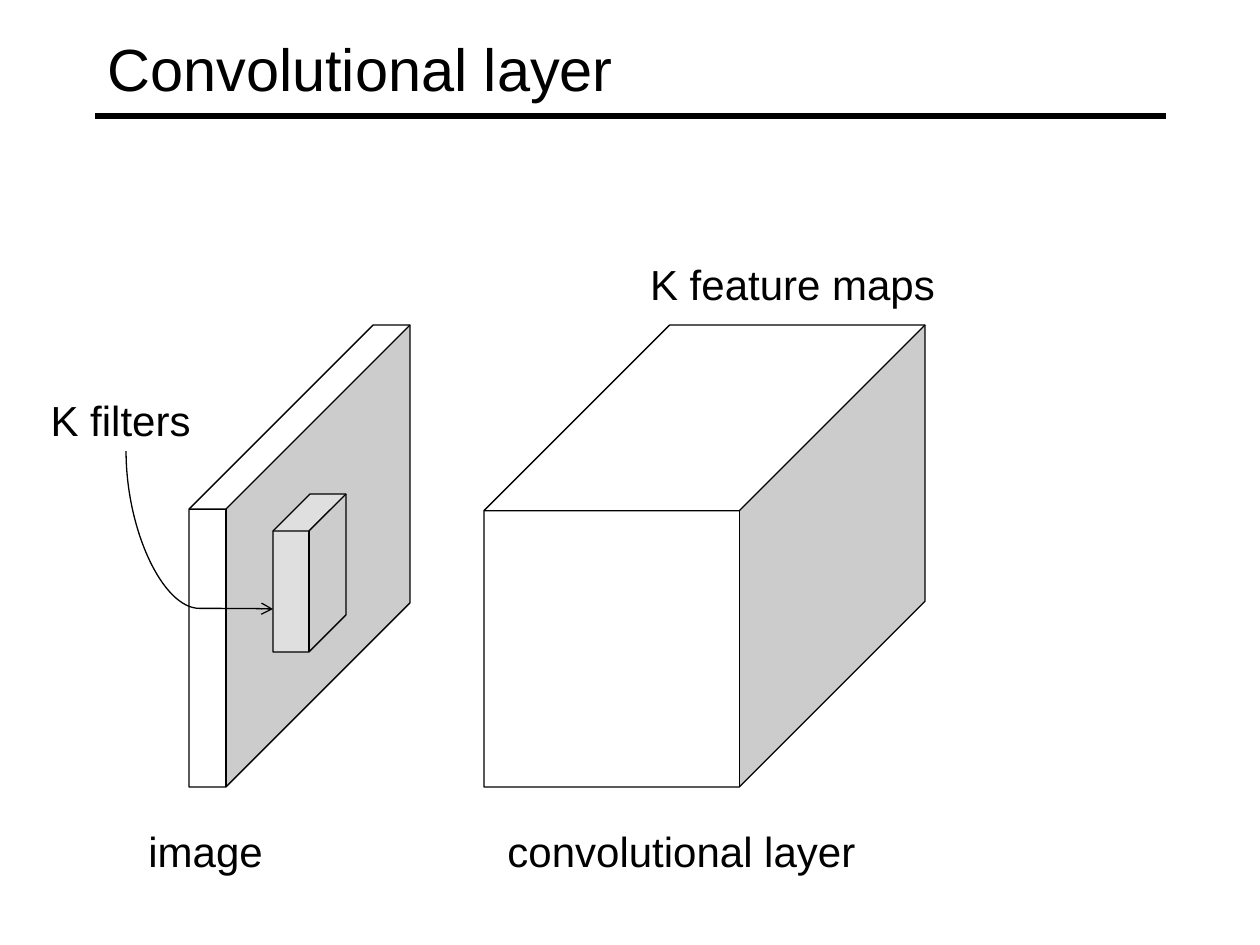
from lxml.etree import SubElement
from pptx import Presentation
from pptx.dml.color import RGBColor
from pptx.enum.shapes import MSO_CONNECTOR, MSO_SHAPE
from pptx.enum.text import MSO_ANCHOR, PP_ALIGN
from pptx.oxml.ns import qn
from pptx.util import Pt

SCALE = 914400 / 126  # EMU in one px
BLACK = RGBColor(0, 0, 0)
WHITE = RGBColor(255, 255, 255)
FONT = {"name": "Arial", "size": Pt(24)}
HEAD = {"name": "Arial", "size": Pt(34)}


def emu(*sizes):
    return [round(size * SCALE) for size in sizes]


def style(font, form):
    for key, value in form.items():
        setattr(font, key, value)
    font.color.rgb = BLACK


def stroke(line, width):
    line.color.rgb = BLACK
    line.width = Pt(width)


def link(slide, kind, ends, width):
    """Draw a connector without a shadow."""
    wire = slide.shapes.add_connector(kind, *emu(*ends))
    stroke(wire.line, width)
    SubElement(wire._element.spPr, qn("a:effectLst"))
    return wire


def header(slide, box, text):
    """Fill the title and rule it off below."""
    title = slide.shapes.title
    title.left, title.top, title.width, title.height = emu(*box)
    frame = title.text_frame
    frame.text = text
    frame.vertical_anchor = MSO_ANCHOR.MIDDLE
    para = frame.paragraphs[0]
    para.alignment = PP_ALIGN.LEFT
    style(para.font, HEAD)
    left, top, width, height = box
    base = top + height - 10
    link(slide, MSO_CONNECTOR.STRAIGHT, (left, base, left + width, base), 3)


def label(slide, box, text, align=PP_ALIGN.LEFT, wrap=False):
    frame = slide.shapes.add_textbox(*emu(*box)).text_frame
    frame.word_wrap = wrap
    para = frame.paragraphs[0]
    para.text = text
    para.alignment = align
    style(para.font, FONT)


def cube(slide, box, depth, alpha=None):
    """Draw a white cube; depth is a share of its shorter side."""
    block = slide.shapes.add_shape(MSO_SHAPE.CUBE, *emu(*box))
    block.adjustments[0] = depth
    block.shadow.inherit = False
    block.fill.solid()
    block.fill.fore_color.rgb = WHITE
    stroke(block.line, 0.75)
    if alpha:
        color = block._element.spPr.find(qn("a:solidFill"))[0]
        SubElement(color, qn("a:alpha"), val=str(alpha * 1000))


def arrow(slide, box):
    """Curve down from the box's top left to its bottom right."""
    left, top, width, height = box
    # The curve is laid out flipped, then given a quarter turn about its centre.
    midx, midy = left + width / 2, top + height / 2
    ends = (midx + height / 2, midy - width / 2,
            midx - height / 2, midy + width / 2)
    wire = link(slide, MSO_CONNECTOR.CURVE, ends, 0.75)
    props = wire._element.spPr
    props.find(qn("a:xfrm")).set("rot", str(270 * 60000))
    shape = props.find(qn("a:prstGeom"))
    guides = shape.find(qn("a:avLst"))
    if guides is None:
        guides = SubElement(shape, qn("a:avLst"))
    SubElement(guides, qn("a:gd"), name="adj1", fmla="val 99600")
    SubElement(props.find(qn("a:ln")), qn("a:tailEnd"), type="arrow")


def layer(slide, box):
    """Draw the output volume with its captions."""
    left, top, width, height = box
    cube(slide, box, 0.421)
    label(slide, (left + 93, top - 73, 431, 63), "K feature maps",
          PP_ALIGN.CENTER, True)
    label(slide, (left + 11, top + height + 32, 386, 63), "convolutional layer")


def image(slide, box):
    """Draw the input slab, the filter on it and their captions."""
    left, top, width, height = box
    cube(slide, box, 0.833)
    cube(slide, (left + 84, top + 169, 73, 158), 0.507, 39)
    label(slide, (left - 157, top + 63, 189, 63), "K filters ",
          PP_ALIGN.CENTER, True)
    arrow(slide, (left - 63, top + 126, 147, 158))
    label(slide, (left - 53, top + height + 32, 141, 63), "image")


def main():
    deck = Presentation()
    deck.slide_width, deck.slide_height = emu(1260, 945)
    slide = deck.slides.add_slide(deck.slide_layouts[5])
    header(slide, (95, 10, 1071, 116), "Convolutional layer")
    layer(slide, (484, 325, 441, 462))
    image(slide, (189, 325, 221, 462))
    deck.save("out.pptx")


if __name__ == "__main__":
    main()
